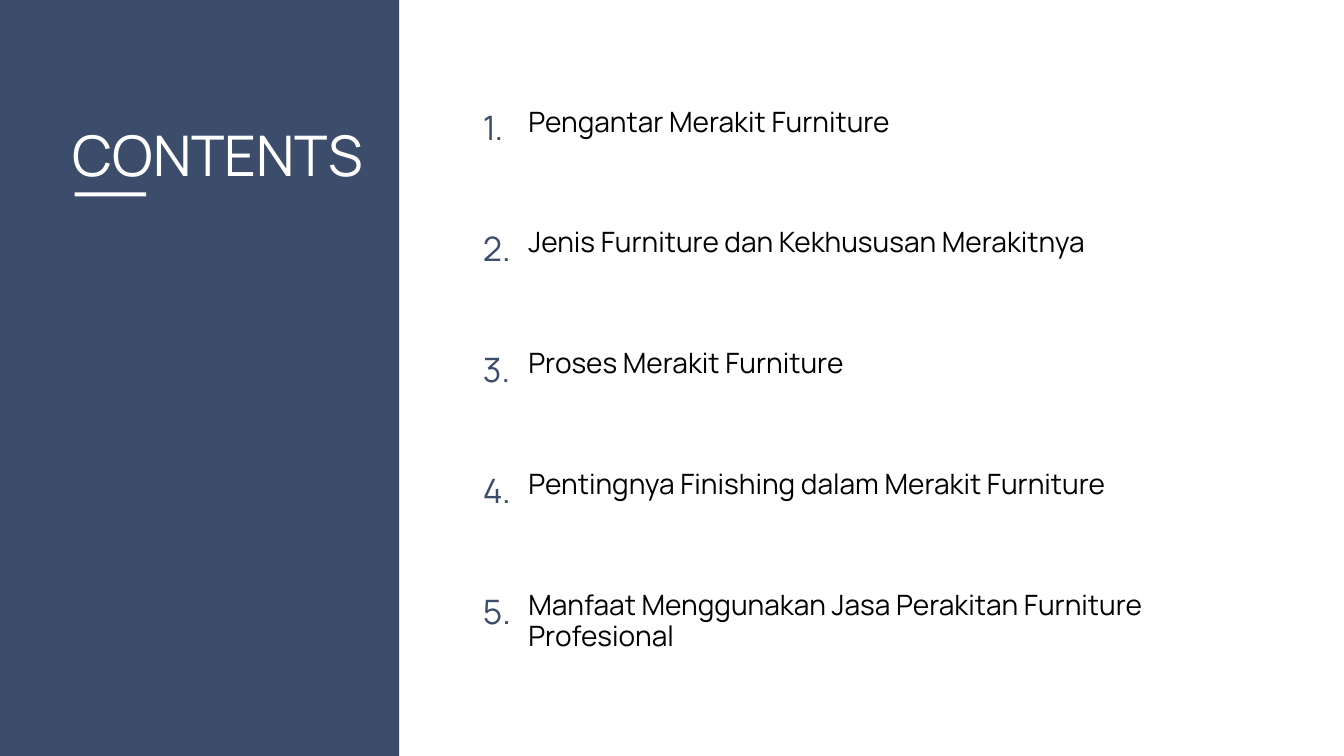
from pptx import Presentation
from pptx.dml.color import RGBColor
from pptx.enum.shapes import MSO_SHAPE as Preset
from pptx.enum.text import MSO_ANCHOR as Anchor
from pptx.util import Pt

EMU_PER_PX = 9144
NAVY = "3C4C6B"
WHITE = "FFFFFF"
BLACK = "000000"

TOPICS = [
    "Pengantar Merakit Furniture",
    "Jenis Furniture dan Kekhususan Merakitnya",
    "Proses Merakit Furniture",
    "Pentingnya Finishing dalam Merakit Furniture",
    "Manfaat Menggunakan Jasa Perakitan Furniture Profesional",
]
FIRST_TOP = 107
TOPIC_STEP = 120

NO_INSETS = {
    "word_wrap": True,
    "margin_left": 0,
    "margin_top": 0,
    "margin_right": 0,
    "margin_bottom": 0,
}


def px(*lengths):
    return [length * EMU_PER_PX for length in lengths]


def color(hex_value):
    return RGBColor.from_string(hex_value)


def apply(target, values):
    for name, value in values.items():
        setattr(target, name, value)


def add_block(slide, box, fill):
    block = slide.shapes.add_shape(Preset.RECTANGLE, *px(*box))
    block.shadow.inherit = False
    block.fill.solid()
    block.fill.fore_color.rgb = color(fill)
    block.line.fill.background()


def add_label(slide, box, wording, size, ink, spacing=0.9, anchor=Anchor.TOP):
    frame = slide.shapes.add_textbox(*px(*box)).text_frame
    apply(frame, {**NO_INSETS, "vertical_anchor": anchor})
    line = frame.paragraphs[0]
    line.line_spacing = spacing
    run = line.add_run()
    run.text = wording
    apply(run.font, {"name": "Manrope", "size": Pt(size)})
    run.font.color.rgb = color(ink)


def add_topic(slide, number, topic):
    top = FIRST_TOP + (number - 1) * TOPIC_STEP
    add_label(slide, (479, top + 4, 43, 39), f"{number}.", 24, NAVY)
    add_label(slide, (524, top, 736, 94), topic, 20, BLACK)


def add_sidebar(slide):
    add_block(slide, (0, 0, 396, 750), NAVY)
    add_label(slide, (72, 112, 310, 81), "CONTENTS", 40, WHITE,
              spacing=1.0, anchor=Anchor.MIDDLE)
    add_block(slide, (74, 191, 71, 4), WHITE)


def main():
    deck = Presentation()
    deck.slide_width, deck.slide_height = px(1333, 750)
    slide = deck.slides.add_slide(deck.slide_layouts[6])
    add_sidebar(slide)
    for number, topic in enumerate(TOPICS, start=1):
        add_topic(slide, number, topic)
    deck.save("out.pptx")


if __name__ == "__main__":
    main()
